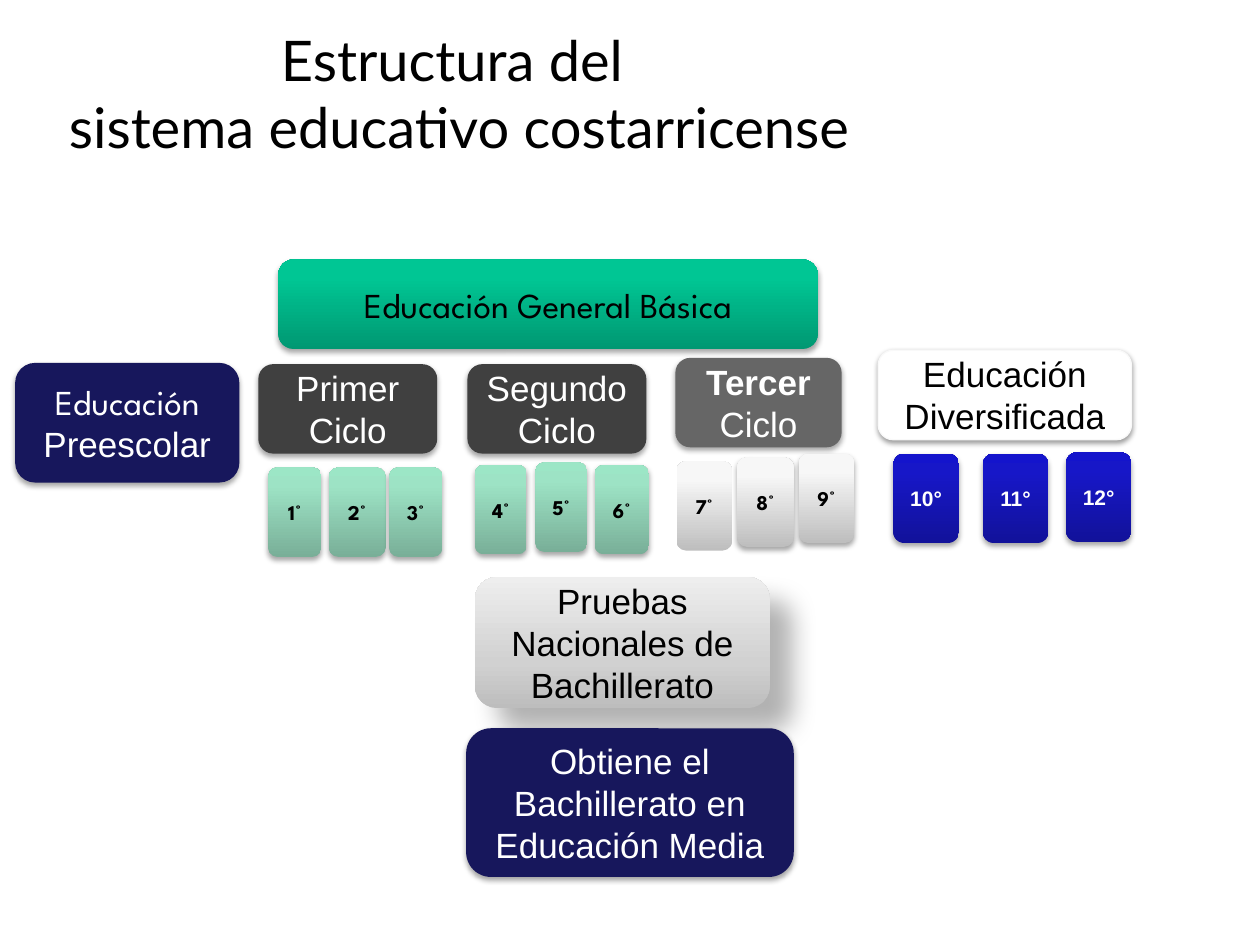
from copy import deepcopy

from lxml.etree import SubElement
from pptx import Presentation
from pptx.dml.color import RGBColor
from pptx.enum.shapes import MSO_SHAPE
from pptx.enum.text import MSO_ANCHOR, PP_ALIGN
from pptx.oxml.ns import qn
from pptx.util import Inches, Pt

BLACK = RGBColor(0x00, 0x00, 0x00)
WHITE = RGBColor(0xFF, 0xFF, 0xFF)
PALE_EDGE = RGBColor(0xF9, 0xF9, 0xF9)
NAVY = RGBColor(0x17, 0x17, 0x5C)
CHARCOAL = RGBColor(0x40, 0x40, 0x40)
GRAY = RGBColor(0x66, 0x66, 0x66)

# Gradients: (position, colour), running from bottom to top
GREEN = [(0, RGBColor(0x00, 0x98, 0x72)), (0.8, RGBColor(0x00, 0xC6, 0x94)),
         (1, RGBColor(0x00, 0xC7, 0x95))]
MINT = [(0, RGBColor(0x79, 0xAF, 0x98)), (0.8, RGBColor(0x9D, 0xE3, 0xC5)),
        (1, RGBColor(0x9C, 0xE6, 0xC6))]
SILVER = [(0, RGBColor(0xBE, 0xBE, 0xBE)), (0.8, RGBColor(0xF7, 0xF7, 0xF7)),
          (1, RGBColor(0xF8, 0xF8, 0xF8))]
BLUE = [(0, RGBColor(0x12, 0x12, 0x9A)), (0.8, RGBColor(0x17, 0x17, 0xC8)),
        (1, RGBColor(0x14, 0x14, 0xCC))]
MIST = [(0, RGBColor(0xBD, 0xBD, 0xBD)), (0.35, RGBColor(0xD1, 0xD1, 0xD1)),
        (1, RGBColor(0xEE, 0xEE, 0xEE))]

# Shadows: opacity %, blur pt, distance pt, direction in degrees
SOFT = (35, 3.1, 1.8, 90)
EDGE = (38, 3.1, 1.6, 90)
DEEP = (30, 15, 18, 45)

SANS, DISPLAY, TITLE = "Arial", "League Spartan", "Lato"
ROW_HEIGHT = 0.71


def add_span(para, text, font, size, color, bold=False):
    span = para.add_run()
    span.text = text
    span.font.name = font
    span.font.size = Pt(size)
    span.font.bold = bold
    span.font.color.rgb = color


def paint(fill, paint_with):
    """Fill with one colour, or with a list of gradient stops."""
    if isinstance(paint_with, RGBColor):
        fill.solid()
        fill.fore_color.rgb = paint_with
        return
    fill.gradient()
    fill.gradient_angle = 90
    stop_list = fill._fill._gradFill.find(qn("a:gsLst"))
    stop_list.append(deepcopy(stop_list[-1]))
    for stop, (position, color) in zip(fill.gradient_stops, paint_with):
        stop.position = position
        stop.color.rgb = color


def cast_shadow(shape, opacity, blur, distance, direction):
    effects = shape._element.spPr.find(qn("a:effectLst"))
    outer = SubElement(effects, qn("a:outerShdw"), blurRad=str(Pt(blur)),
                       dist=str(Pt(distance)), dir=str(direction * 60000),
                       rotWithShape="0")
    color = SubElement(outer, qn("a:srgbClr"), val="000000")
    SubElement(color, qn("a:alpha"), val=str(opacity * 1000))


def add_card(page, box, paint_with, spans, shadow=SOFT, edge=None):
    """Rounded card with centred text; spans are add_span arguments."""
    card = page.shapes.add_shape(MSO_SHAPE.ROUNDED_RECTANGLE, *map(Inches, box))
    paint(card.fill, paint_with)
    if edge:
        card.line.color.rgb = edge
        card.line.width = Pt(0.75)
    else:
        card.line.fill.background()
    card.shadow.inherit = False
    if shadow:
        cast_shadow(card, *shadow)
    frame = card.text_frame
    frame.word_wrap = True
    frame.vertical_anchor = MSO_ANCHOR.MIDDLE
    para = frame.paragraphs[0]
    para.alignment = PP_ALIGN.CENTER
    for span in spans:
        add_span(para, *span)


def add_title(page, box):
    frame = page.shapes.add_textbox(*map(Inches, box)).text_frame
    frame.word_wrap = True
    para = frame.paragraphs[0]
    para.alignment = PP_ALIGN.CENTER
    add_span(para, "Estructura del ", TITLE, 32, BLACK)
    para.add_line_break()
    add_span(para, "sistema educativo costarricense", TITLE, 32, BLACK)


def add_grades(page, first, places, paint_with, font, color, flat=()):
    """Row of school years; each place is left, top, width."""
    for grade, (left, top, width) in enumerate(places, first):
        add_card(page, (left, top, width, ROW_HEIGHT), paint_with,
                 [(f"{grade}°", font, 12, color, True)],
                 shadow=None if grade in flat else SOFT)


def add_levels(page):
    # Preschool, the cycles and the diversified level
    add_card(page, (0.12, 2.88, 1.78, 0.95), NAVY,
             [("Educación ", DISPLAY, 20, WHITE), ("Preescolar", SANS, 20, WHITE)])
    for left, name in ((2.05, "Primer Ciclo"), (3.71, "Segundo Ciclo")):
        add_card(page, (left, 2.89, 1.42, ROW_HEIGHT), CHARCOAL,
                 [(name, SANS, 20, WHITE)])
    add_card(page, (6.97, 2.78, 2.01, ROW_HEIGHT), WHITE,
             [("Educación Diversificada", SANS, 20, BLACK)], EDGE, PALE_EDGE)
    add_card(page, (5.36, 2.84, 1.32, ROW_HEIGHT), GRAY,
             [("Tercer ", SANS, 20, WHITE, True), ("Ciclo", SANS, 20, WHITE)])

    # School years under each cycle
    add_grades(page, 1, [(2.13, 3.71, 0.42), (2.61, 3.71, 0.45), (3.09, 3.71, 0.42)],
               MINT, DISPLAY, BLACK)
    add_grades(page, 4, [(3.77, 3.69, 0.41), (4.25, 3.67, 0.41), (4.72, 3.69, 0.43)],
               MINT, DISPLAY, BLACK)
    add_grades(page, 7, [(5.37, 3.66, 0.44), (5.85, 3.63, 0.45), (6.34, 3.6, 0.44)],
               SILVER, DISPLAY, BLACK, flat=(7,))
    add_grades(page, 10, [(7.09, 3.6, 0.52), (7.8, 3.6, 0.52), (8.46, 3.59, 0.52)],
               BLUE, SANS, WHITE)

    # Heading over the basic cycles
    add_card(page, (2.21, 2.06, 4.28, ROW_HEIGHT), GREEN,
             [("Educación General Básica", DISPLAY, 20, BLACK)])


def add_outcome(page):
    # Final exams and the diploma
    add_card(page, (3.77, 4.58, 2.34, 1.04), MIST,
             [("Pruebas Nacionales de Bachillerato", SANS, 20, BLACK)], DEEP)
    add_card(page, (3.7, 5.78, 2.6, 1.18), NAVY,
             [("Obtiene el Bachillerato en Educación Media", SANS, 20, WHITE)])


def main():
    deck = Presentation()
    deck.slide_width, deck.slide_height = Inches(10), Inches(7.5)
    page = deck.slides.add_slide(deck.slide_layouts[6])
    add_title(page, (0.12, 0.15, 7.05, 1.18))
    add_levels(page)
    add_outcome(page)
    deck.save("out.pptx")


if __name__ == "__main__":
    main()
